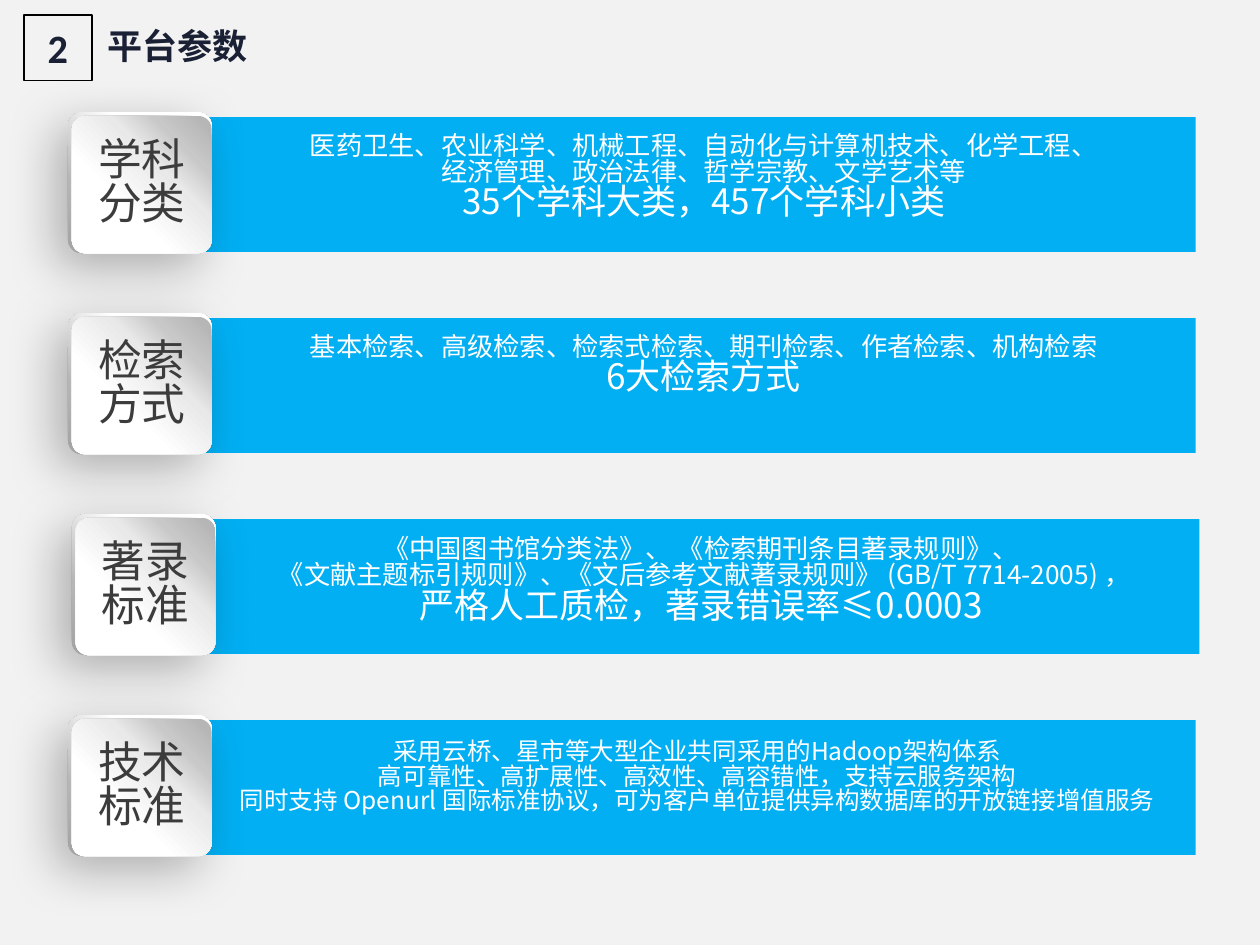
from lxml import etree
from pptx import Presentation
from pptx.dml.color import RGBColor
from pptx.enum.shapes import MSO_SHAPE
from pptx.enum.text import MSO_ANCHOR, PP_ALIGN
from pptx.oxml import parse_xml
from pptx.oxml.ns import qn
from pptx.util import Inches, Pt

RECT, ROUND = MSO_SHAPE.RECTANGLE, MSO_SHAPE.ROUNDED_RECTANGLE
MID, TOP = MSO_ANCHOR.MIDDLE, MSO_ANCHOR.TOP
LEFT, CENTER = PP_ALIGN.LEFT, PP_ALIGN.CENTER
NS = 'xmlns:a="http://schemas.openxmlformats.org/drawingml/2006/main"'
CJK = "Noto Sans CJK SC"
TIGHT = 0.83

WIDE, NARROW = (1.16, 7.67), (1.55, 6.99)  # text left within a row, width
FIRST, PITCH = 0.89, 1.595
# label, row left, text span, text top, [(line, size)]
ROWS = [
    ("学科分类", 0.54, NARROW, 0.13, [
        ("医药卫生、农业科学、机械工程、自动化与计算机技术、化学工程、", 15),
        ("经济管理、政治法律、哲学宗教、文学艺术等", 15),
        ("35个学科大类，457个学科小类", 20)]),
    ("检索方式", 0.54, NARROW, 0.13, [
        ("基本检索、高级检索、检索式检索、期刊检索、作者检索、机构检索", 15),
        ("6大检索方式", 20)]),
    ("著录标准", 0.57, WIDE, 0.14, [
        ("《中国图书馆分类法》、 《检索期刊条目著录规则》、", 15),
        (" 《文献主题标引规则》、《文后参考文献著录规则》 (GB/T 7714-2005) ，", 15),
        ("严格人工质检，著录错误率≤0.0003", 20)]),
    ("技术标准", 0.54, WIDE, 0.16, [
        ("采用云桥、星市等大型企业共同采用的Hadoop架构体系", 14),
        ("高可靠性、高扩展性、高效性、高容错性，支持云服务架构", 14),
        ("同时支持 Openurl 国际标准协议，可为客户单位提供异构数据库的开放链接增值服务", 14)]),
]


def color(code):
    return RGBColor.from_string(code)


def box(left, top, width, height):
    return [Inches(v) for v in (left, top, width, height)]


def write(shape, lines, tint, font=CJK, bold=False, align=CENTER,
          anchor=MID, space=TIGHT):
    """Fill a shape with (text, size) paragraphs."""
    frame = shape.text_frame
    frame.word_wrap = True
    frame.vertical_anchor = anchor
    frame.text = "\n".join(text for text, _ in lines)
    for para, (_, size) in zip(frame.paragraphs, lines):
        para.alignment = align
        para.line_spacing = space
        for run in para.runs:
            run.font.name, run.font.size, run.font.bold = font, Pt(size), bold
            run.font.color.rgb = color(tint)
            east = etree.SubElement(run.font._element, qn("a:ea"))
            east.set("typeface", font)


def plain(shapes, kind, area):
    """Add a shape with no line and no shadow."""
    shape = shapes.add_shape(kind, *box(*area))
    shape.shadow.inherit = False
    shape.line.fill.background()
    return shape


def tile(shapes, area, stops, focus):
    """Add a rounded tile whose gradient spreads from one corner."""
    shape = plain(shapes, ROUND, area)
    shape.adjustments[0] = 0.097
    marks = "".join(f'<a:gs pos="{at * 1000}"><a:srgbClr val="{code}"/></a:gs>'
                    for at, code in stops)
    shape._element.spPr.find(qn("a:prstGeom")).addnext(parse_xml(
        f'<a:gradFill {NS} rotWithShape="1"><a:gsLst>{marks}</a:gsLst>'
        f'<a:path path="circle"><a:fillToRect {focus}/></a:path></a:gradFill>'))
    return shape


def cast(shape):
    """Give a shape a soft shadow to the lower left."""
    shape._element.spPr.find(qn("a:effectLst")).append(parse_xml(
        f'<a:outerShdw {NS} blurRad="{Pt(29)}" dist="{Pt(11)}" '
        f'dir="{133 * 60000}" algn="tr" rotWithShape="0">'
        '<a:srgbClr val="000000"><a:alpha val="27000"/></a:srgbClr>'
        '</a:outerShdw>'))


def add_row(slide, left, top, label, span, drop, lines):
    shapes = slide.shapes.add_group_shape().shapes
    bar = plain(shapes, RECT, (left + 1.04, top + 0.04, 7.91, 1.07))
    bar.fill.solid()
    bar.fill.fore_color.rgb = color("02AFF3")
    back = tile(shapes, (left, top, 1.14, 1.12),
                [(0, "FFFFFF"), (35, "FFFFFF"), (74, "B6B6B6"), (100, "A3A3A3")],
                'l="100000" b="100000"')
    cast(back)
    face = tile(shapes, (left + 0.03, top + 0.03, 1.11, 1.09),
                [(0, "FFFFFF"), (35, "FFFFFF"), (63, "E9E9E9"),
                 (79, "C8C8C8"), (95, "B6B6B6")],
                't="100000" r="100000"')
    write(face, [(label, 25)], "3C3C3C")
    shift, width = span
    text = shapes.add_textbox(*box(left + shift, top + drop, width, 0.94))
    write(text, lines, "FFFFFF", anchor=TOP)


def add_head(slide, left, top):
    title = slide.shapes.title
    title.left, title.top, title.width, title.height = box(
        left + 0.56, top + 0.04, 2.16, 0.45)
    write(title, [("平台参数", 20)], "1B2135", bold=True, align=LEFT, space=0.9)
    badge = plain(slide.shapes, RECT, (left, top, 0.54, 0.52))
    badge.fill.background()
    badge.line.color.rgb = color("000000")
    badge.line.width = Pt(0.75)
    write(badge, [("2", 23)], "1B2135", font="Calibri", bold=True, space=1.0)


def main():
    deck = Presentation()
    deck.slide_width, deck.slide_height = Inches(10), Inches(7.5)
    slide = deck.slides.add_slide(deck.slide_layouts[5])
    slide.background.fill.solid()
    slide.background.fill.fore_color.rgb = color("F2F2F2")
    for i, (label, left, span, drop, lines) in enumerate(ROWS):
        add_row(slide, left, FIRST + i * PITCH, label, span, drop, lines)
    add_head(slide, 0.19, 0.12)
    deck.save("out.pptx")


if __name__ == "__main__":
    main()
